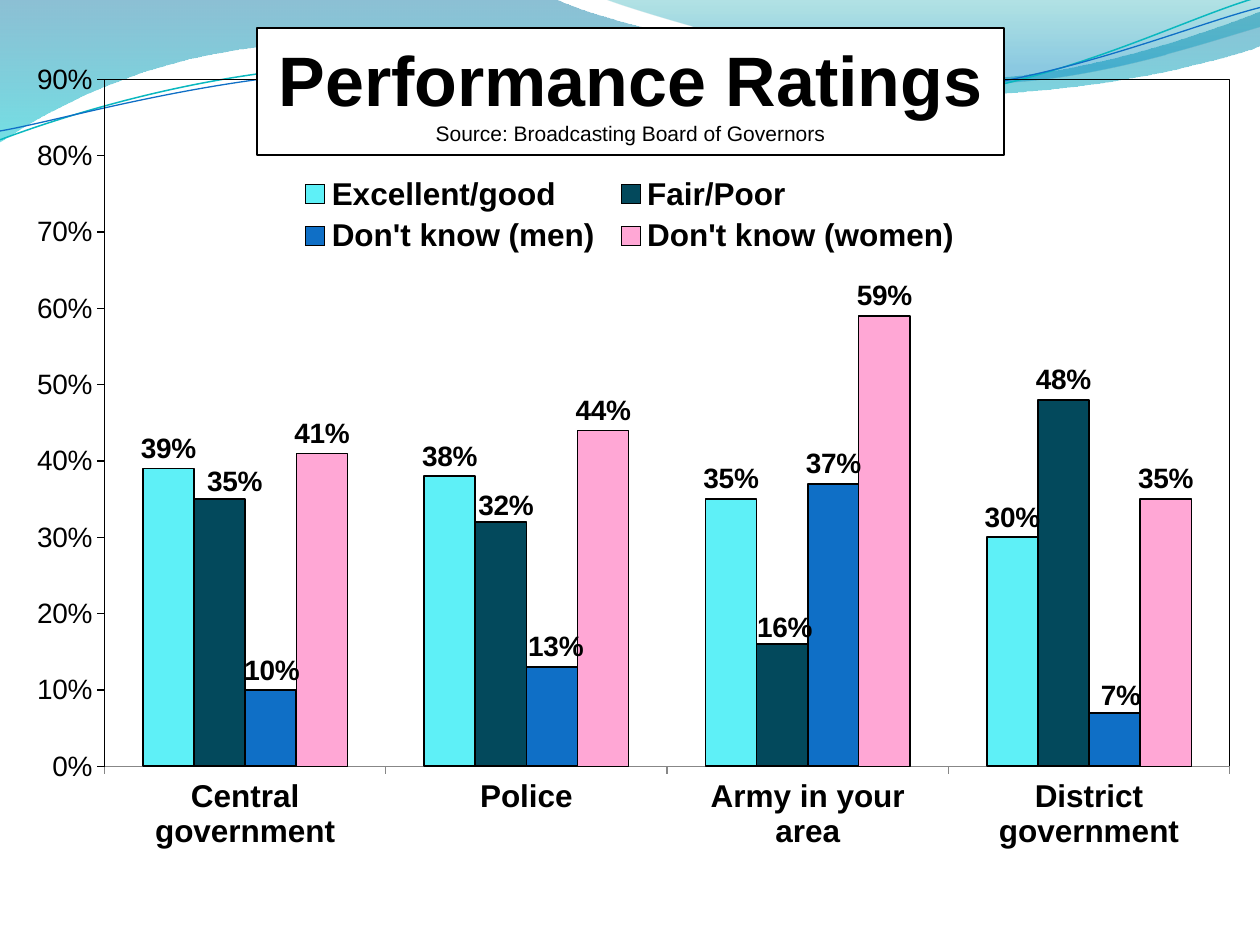
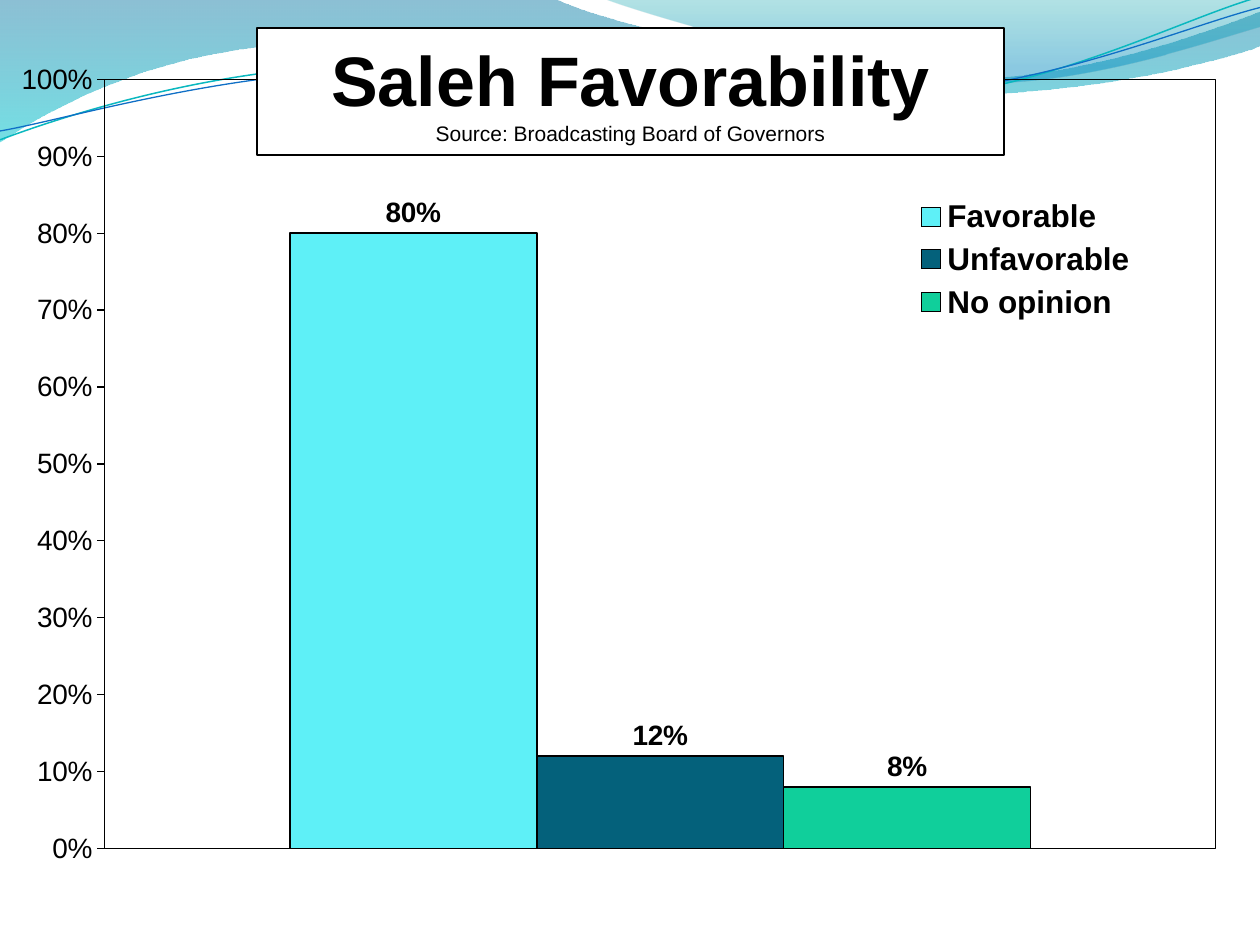
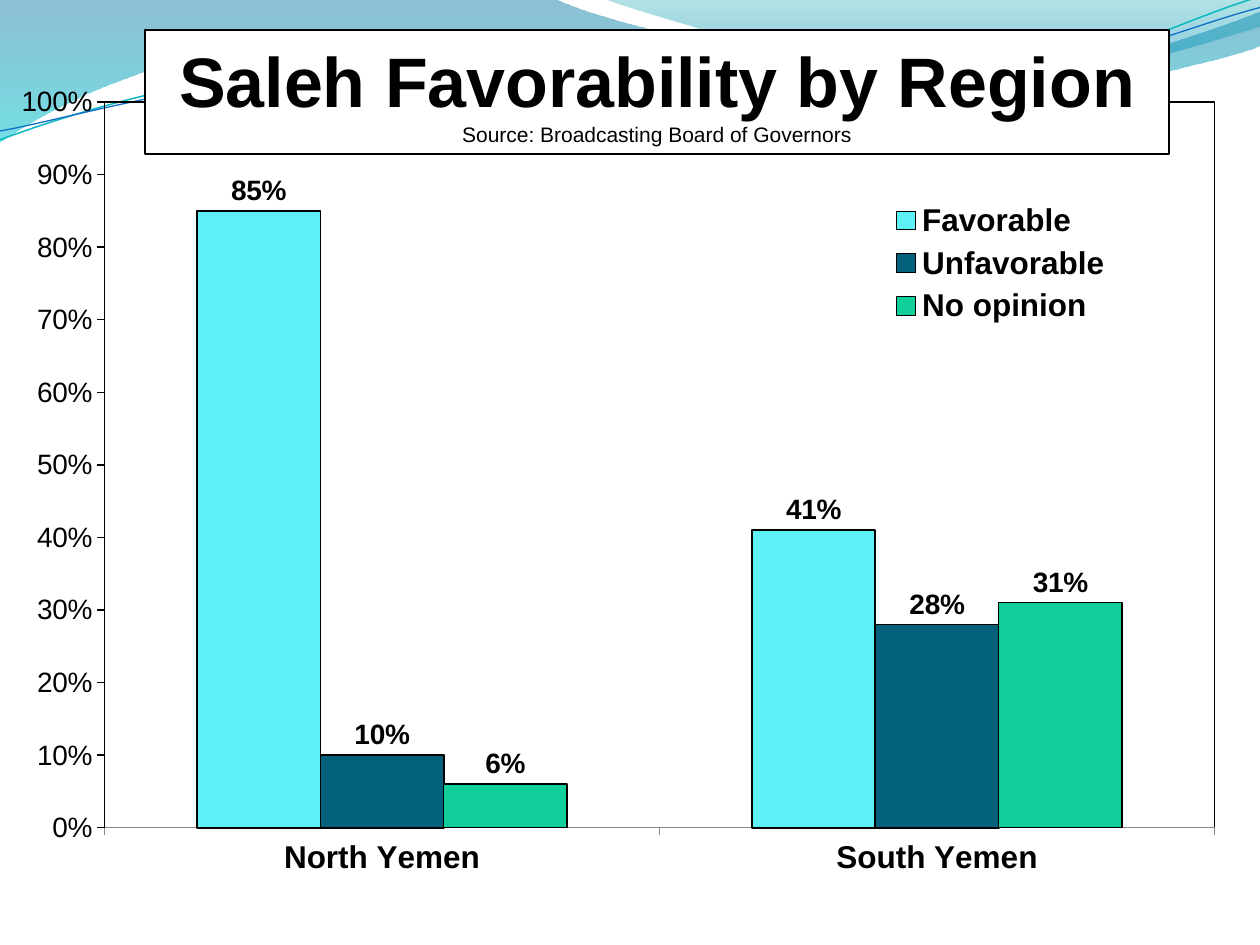
from math import cos, radians, sin

from pptx import Presentation
from pptx.chart.data import CategoryChartData
from pptx.dml.color import RGBColor
from pptx.enum.chart import XL_CHART_TYPE, XL_LABEL_POSITION, XL_LEGEND_POSITION, XL_TICK_MARK
from pptx.enum.shapes import MSO_SHAPE
from pptx.enum.text import MSO_ANCHOR, MSO_AUTO_SIZE, PP_ALIGN
from pptx.oxml import parse_xml
from pptx.oxml.ns import nsdecls, qn
from pptx.util import Inches, Pt

COLUMNS = XL_CHART_TYPE.COLUMN_CLUSTERED
OUTSIDE_END = XL_LABEL_POSITION.OUTSIDE_END
LEGEND_TOP = XL_LEGEND_POSITION.TOP
TICK_OUT, TICK_NONE = XL_TICK_MARK.OUTSIDE, XL_TICK_MARK.NONE
RECTANGLE = MSO_SHAPE.RECTANGLE
MIDDLE, CENTER = MSO_ANCHOR.MIDDLE, PP_ALIGN.CENTER
GROW = MSO_AUTO_SIZE.SHAPE_TO_FIT_TEXT

BLACK = RGBColor(0x00, 0x00, 0x00)
WHITE = RGBColor(0xFF, 0xFF, 0xFF)
AQUA = RGBColor(0x5E, 0xF0, 0xF7)
DARK_TEAL = RGBColor(0x03, 0x49, 0x5C)
TEAL = RGBColor(0x04, 0x61, 0x7B)
BLUE = RGBColor(0x0F, 0x6F, 0xC6)
PINK = RGBColor(0xFF, 0xA7, 0xD5)
GREEN = RGBColor(0x10, 0xCF, 0x9B)
CYAN_LINE = RGBColor(0x0A, 0xB8, 0xBF)
BAND_BLUE = RGBColor(0x00, 0x74, 0xA1)
BAND_CYAN = RGBColor(0x00, 0xC6, 0xCF)
CREST_CYAN = RGBColor(0x00, 0xA1, 0xA9)
CREST_BLUE = RGBColor(0x00, 0x8B, 0xBF)

FONT = "Arial"
CHART_FONT = "TeX Gyre Pagella"
SOURCE = "Source: Broadcasting Board of Governors"

BANDS = [
    ([(0, 0), (4.4, -0.01),
      (4.76, 0.17, 6.64, 0.63, 7.58, 0.63), (8.53, 0.63, 9.58, 0.26, 10, 0.09),
      (10.01, 0.36),
      (9.83, 0.44, 8.7, 0.76, 7.46, 0.75), (6.22, 0.75, 3.82, 0.28, 2.57, 0.34),
      (1.29, 0.36, 0.46, 0.83, -0.01, 1.13)],
     [(0, BAND_BLUE, 45), (1, BAND_CYAN, 55)]),
    ([(4.79, -0.01),
      (5.09, 0.11, 6.82, 0.62, 7.69, 0.65), (8.56, 0.69, 9.61, 0.32, 10, 0.21),
      (10, 0)],
     [(0, CREST_CYAN, 30), (0.8, CREST_BLUE, 45)]),
]
RIPPLE_TILT = -2.7
RIPPLES = [
    ([(0, 1.11), (0.48, 0.93, 1.58, 0.57, 2.77, 0.52),
      (3.95, 0.47, 5.93, 0.89, 7.13, 0.8), (8.33, 0.71, 9.38, 0.15, 9.98, -0.02)],
     (4.99, 0.57), CYAN_LINE, 0.85),
    ([(0, 1.04), (0.47, 0.96, 1.64, 0.61, 2.83, 0.56),
      (4.03, 0.51, 5.97, 0.84, 7.17, 0.75), (8.36, 0.67, 9.41, 0.21, 10, 0.06)],
     (5, 0.59), BLUE, 0.75),
]

WIDE_TITLE = (1.15, 0.24, 8.13, 0.98)
TITLE = (2.04, 0.22, 5.93, 1.01)

SLIDES = [
    {"title": "Performance Ratings", "title_box": TITLE,
     "categories": ["Central government", "Police", "Army in your area", "District government"],
     "series": [
         ("Excellent/good", [0.39, 0.38, 0.35, 0.3], AQUA, 1),
         ("Fair/Poor", [0.35, 0.32, 0.16, 0.48], DARK_TEAL, 1),
         ("Don't know (men)", [0.1, 0.13, 0.37, 0.07], BLUE, 1),
         ("Don't know (women)", [0.41, 0.44, 0.59, 0.35], PINK, 0.75)],
     "maximum": 0.9, "show_categories": True,
     "plot": (0.083, 0.084, 0.893, 0.727), "legend": (0.23, 0.18, 0.54, 0.095),
     "label_shifts": {(1, 0): (0.012, 0.003), (1, 1): (0.004, 0.004), (1, 2): (0.002, 0.004),
                      (2, 0): (0.001, 0.001), (2, 1): (0.003, 0), (2, 3): (0.005, 0.003)}},
    {"title": "Saleh Favorability", "title_box": TITLE,
     "categories": ["1"],
     "series": [
         ("Favorable", [0.8], AQUA, 1),
         ("Unfavorable", [0.12], TEAL, 1),
         ("No opinion", [0.08], GREEN, 0.75)],
     "maximum": 1, "show_categories": False,
     "plot": (0.083, 0.084, 0.882, 0.814), "legend": (0.719, 0.203, 0.19, 0.143),
     "label_shifts": {}},
    {"title": "Saleh Favorability by Region", "title_box": WIDE_TITLE,
     "categories": ["North Yemen", "South Yemen"],
     "series": [
         ("Favorable", [0.85, 0.41], AQUA, 1),
         ("Unfavorable", [0.1, 0.28], TEAL, 1),
         ("No opinion", [0.06, 0.31], GREEN, 0.75)],
     "maximum": 1, "show_categories": True,
     "plot": (0.083, 0.108, 0.881, 0.768), "legend": (0.699, 0.207, 0.19, 0.143),
     "label_shifts": {}},
]


def pairs(part):
    return list(zip(part[::2], part[1::2]))


def turn(path, center, degrees):
    c, s = cos(radians(degrees)), sin(radians(degrees))
    cx, cy = center
    return [tuple(value for x, y in pairs(part)
                  for value in (cx + (x - cx) * c - (y - cy) * s,
                                cy + (x - cx) * s + (y - cy) * c))
            for part in path]


def add_wave(slide, path, close):
    anchors = [(Inches(part[-2]), Inches(part[-1])) for part in path]
    builder = slide.shapes.build_freeform(*anchors[0])
    builder.add_line_segments(anchors[1:], close=close)
    wave = builder.convert_to_shape()
    wave.shadow.inherit = False
    segments = list(wave.element.spPr.iter(qn("a:lnTo")))
    for segment, part in zip(segments, path[1:]):
        if len(part) == 6:
            points = "".join(
                f'<a:pt x="{Inches(x) - wave.left}" y="{Inches(y) - wave.top}"/>'
                for x, y in pairs(part))
            segment.getparent().replace(segment, parse_xml(
                f'<a:cubicBezTo {nsdecls("a")}>{points}</a:cubicBezTo>'))
    return wave


def add_master_waves(master, slide):
    waves = []
    for path, stops in BANDS:
        band = add_wave(slide, path, True)
        band.line.fill.background()
        band.fill.gradient()
        band.fill.gradient_angle = 270
        for stop, (position, color, _) in zip(band.fill.gradient_stops, stops):
            stop.position = position
            stop.color.rgb = color
        tints = band.element.spPr.iter(qn("a:srgbClr"))
        for tint, (_, _, opacity) in zip(list(tints), stops):
            tint.append(parse_xml(f'<a:alpha {nsdecls("a")} val="{opacity * 1000}"/>'))
        waves.append(band)
    for path, center, color, width in RIPPLES:
        ripple = add_wave(slide, turn(path, center, -RIPPLE_TILT), False)
        ripple.rotation = RIPPLE_TILT
        ripple.fill.background()
        ripple.line.color.rgb = color
        ripple.line.width = Pt(width)
        waves.append(ripple)
    for number, wave in enumerate(waves):
        wave.element.nvSpPr.cNvPr.set("id", str(20 + number))
        master.shapes.element.insert(2 + number, wave.element)


def set_font(font, size, bold=False, name=FONT):
    font.name = name
    font.size = Pt(size)
    font.bold = bold
    font.color.rgb = BLACK


def set_outline(line, width):
    line.color.rgb = BLACK
    line.width = Pt(width)


def set_layout(parent, index, values, inner=False):
    for old in parent.findall(qn("c:layout")):
        parent.remove(old)
    entries = '<c:layoutTarget val="inner"/>' if inner else ""
    if len(values) == 4:
        entries += '<c:xMode val="edge"/><c:yMode val="edge"/>'
    entries += "".join(f'<c:{key} val="{value}"/>' for key, value in zip("xywh", values))
    parent.insert(index, parse_xml(
        f'<c:layout {nsdecls("c")}><c:manualLayout>{entries}</c:manualLayout></c:layout>'))


def add_ratings_chart(slide, content, width, height):
    data = CategoryChartData(number_format="0%")
    data.categories = content["categories"]
    for name, values, _, _ in content["series"]:
        data.add_series(name, values)
    chart = slide.shapes.add_chart(COLUMNS, 0, 0, width, height, data).chart
    chart.has_title = False
    set_font(chart.font, 18, name=CHART_FONT)

    plot = chart.plots[0]
    plot.gap_width = 150
    plot.overlap = 0
    plot.vary_by_categories = False
    for series, (_, _, color, outline) in zip(plot.series, content["series"]):
        series.format.fill.solid()
        series.format.fill.fore_color.rgb = color
        set_outline(series.format.line, outline)
        labels = series.data_labels
        labels.show_value = True
        labels.position = OUTSIDE_END
        labels.number_format = "0%"
        labels.number_format_is_linked = False
        set_font(labels.font, 16, True)

    shifts = content["label_shifts"]
    for row, column in shifts:
        label = plot.series[row].points[column].data_label
        label.position = OUTSIDE_END
        set_font(label.font, 16, True)
    for label, shift in zip(list(chart.element.iter(qn("c:dLbl"))), shifts.values()):
        set_layout(label, 1, shift)

    ratings = chart.value_axis
    ratings.minimum_scale = 0
    ratings.maximum_scale = content["maximum"]
    ratings.major_unit = 0.1
    ratings.has_major_gridlines = False
    ratings.major_tick_mark = TICK_OUT
    ratings.minor_tick_mark = TICK_NONE
    ratings.tick_labels.number_format = "0%"
    ratings.tick_labels.number_format_is_linked = False
    set_font(ratings.tick_labels.font, 16)
    set_outline(ratings.format.line, 0.75)

    groups = chart.category_axis
    groups.visible = content["show_categories"]
    groups.major_tick_mark = TICK_OUT
    groups.minor_tick_mark = TICK_NONE
    set_font(groups.tick_labels.font, 18, True)

    chart.has_legend = True
    chart.legend.position = LEGEND_TOP
    chart.legend.include_in_layout = False
    set_font(chart.legend.font, 18, True)

    body = chart.element.find(qn("c:chart"))
    set_layout(body.find(qn("c:legend")), 1, content["legend"])
    plot_area = body.find(qn("c:plotArea"))
    set_layout(plot_area, 0, content["plot"], inner=True)
    plot_area.append(parse_xml(
        f'<c:spPr {nsdecls("c", "a")}><a:noFill/><a:ln w="{Pt(0.75)}"><a:solidFill>'
        f'<a:srgbClr val="{BLACK}"/></a:solidFill></a:ln></c:spPr>'))
    body.addnext(parse_xml(
        f'<c:spPr {nsdecls("c", "a")}><a:noFill/><a:ln><a:noFill/></a:ln></c:spPr>'))


def add_title(slide, title, box):
    panel = slide.shapes.add_shape(RECTANGLE, *map(Inches, box))
    panel.shadow.inherit = False
    panel.fill.solid()
    panel.fill.fore_color.rgb = WHITE
    set_outline(panel.line, 1)
    frame = panel.text_frame
    frame.word_wrap = False
    frame.auto_size = GROW
    frame.vertical_anchor = MIDDLE
    heading, credit = frame.paragraphs[0], frame.add_paragraph()
    for paragraph, text, size, bold in ((heading, title, 40, True), (credit, SOURCE, 12, False)):
        paragraph.alignment = CENTER
        run = paragraph.add_run()
        run.text = text
        set_font(run.font, size, bold)


def main():
    deck = Presentation()
    deck.slide_width, deck.slide_height = Inches(10), Inches(7.5)
    blank = deck.slide_layouts[6]
    for number, content in enumerate(SLIDES):
        slide = deck.slides.add_slide(blank)
        if number == 0:
            add_master_waves(deck.slide_master, slide)
        add_ratings_chart(slide, content, deck.slide_width, deck.slide_height)
        add_title(slide, content["title"], content["title_box"])
    deck.save("out.pptx")


if __name__ == "__main__":
    main()
